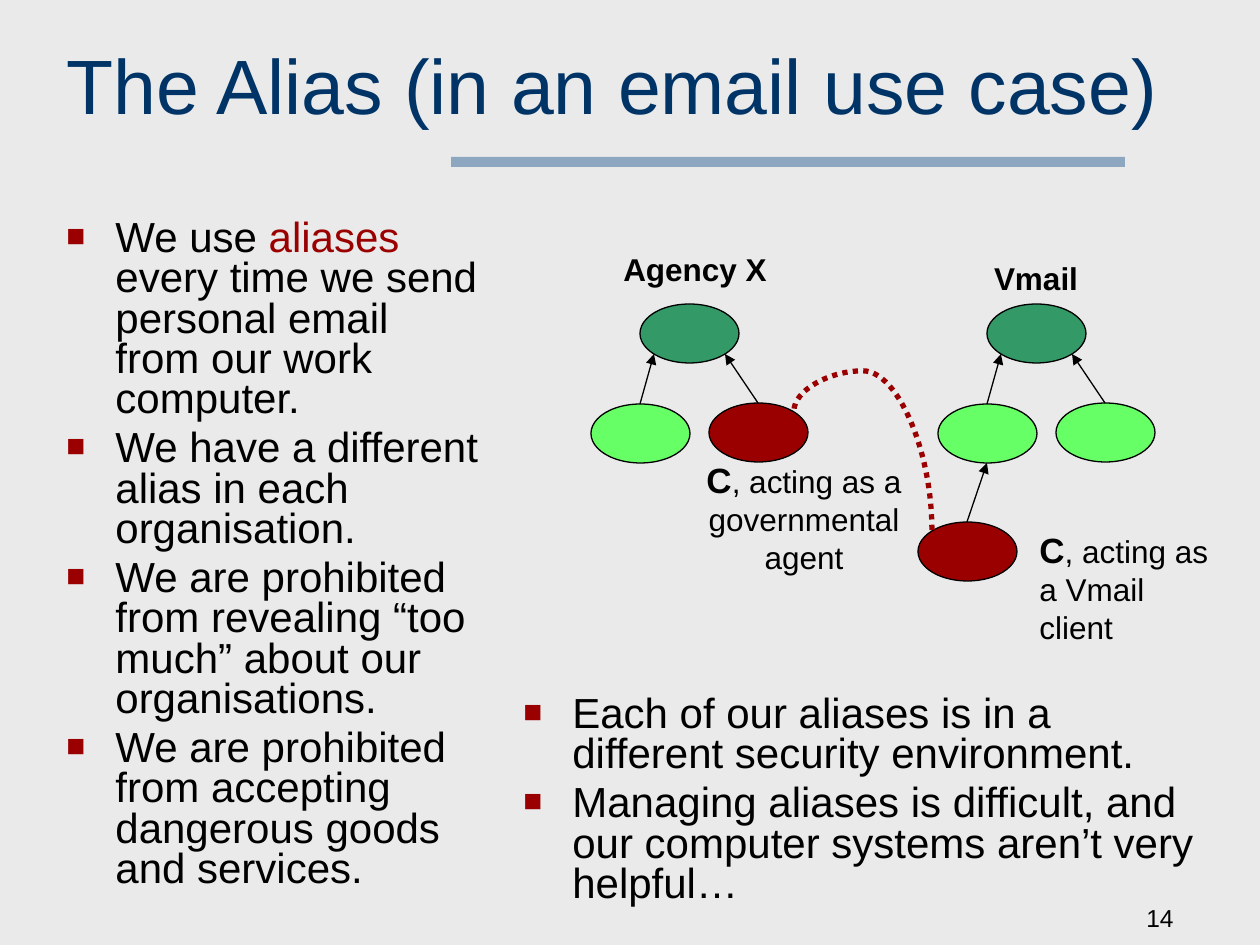
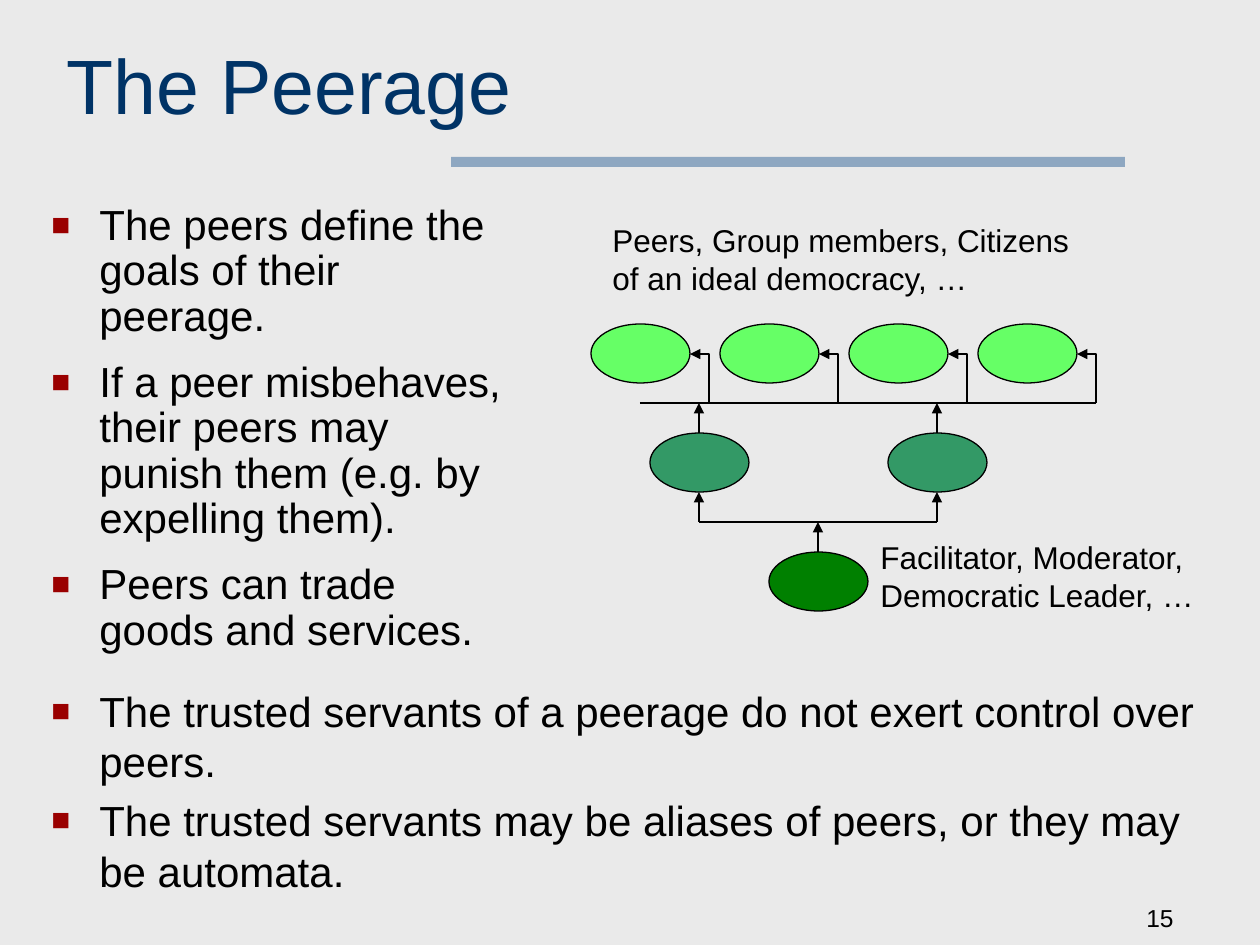
from lxml import etree
from pptx import Presentation
from pptx.dml.color import RGBColor
from pptx.enum.dml import MSO_LINE
from pptx.enum.shapes import MSO_CONNECTOR, MSO_SHAPE
from pptx.enum.text import MSO_ANCHOR, PP_ALIGN
from pptx.oxml.ns import qn
from pptx.util import Emu, Pt

EMU_PER_PX = 914400 / 126
SLIDE_W, SLIDE_H = 1260, 945
BLANK_LAYOUT = 6

FONT = "Arial"
PAPER, BLACK, NAVY, BAND = "EAEAEA", "000000", "003366", "336699"
DARK_RED, TEAL, LIGHT_GREEN, DEEP_GREEN = "9A0000", "339966", "66FF66", "008000"

CENTER, RIGHT = PP_ALIGN.CENTER, PP_ALIGN.RIGHT
TOP, BOTTOM = MSO_ANCHOR.TOP, MSO_ANCHOR.BOTTOM
STRAIGHT, ELBOW, CURVE = MSO_CONNECTOR.STRAIGHT, MSO_CONNECTOR.ELBOW, MSO_CONNECTOR.CURVE
OVAL, RECTANGLE = MSO_SHAPE.OVAL, MSO_SHAPE.RECTANGLE
DOTTED = MSO_LINE.ROUND_DOT

NODE_W, NODE_H = 99, 59
HALF_NODE = 49
MAIL_PROVIDER = "Vmail"


def px(length):
    return Emu(round(length * EMU_PER_PX))


def rgb(hex_colour):
    return RGBColor.from_string(hex_colour)


def add_child(parent, tag, **attributes):
    return etree.SubElement(parent, qn(tag), **attributes)


def set_all(target, values):
    for name, value in values.items():
        setattr(target, name, value)


def add_text(slide, box, paragraphs, size, colour=BLACK, anchor=TOP, bullet_indent=0, **spacing):
    """Each paragraph is a list of (text, overrides) runs."""
    frame = slide.shapes.add_textbox(*map(px, box)).text_frame
    set_all(frame, {"word_wrap": True, "vertical_anchor": anchor})
    for index, runs in enumerate(paragraphs):
        paragraph = frame.add_paragraph() if index else frame.paragraphs[0]
        set_all(paragraph, spacing)
        if bullet_indent:
            add_bullet(paragraph, bullet_indent)
        for text, overrides in runs:
            style = {"size": size, "colour": colour, "bold": False, **overrides}
            run = paragraph.add_run()
            run.text = text
            set_all(run.font, {"name": FONT, "size": Pt(style["size"]), "bold": style["bold"]})
            run.font.color.rgb = rgb(style["colour"])


def add_bullet(paragraph, indent):
    properties = paragraph._p.get_or_add_pPr()
    properties.set("marL", str(px(indent)))
    properties.set("indent", str(-px(indent)))
    add_child(add_child(properties, "a:buClr"), "a:srgbClr", val=DARK_RED)
    add_child(properties, "a:buSzPct", val="75000")
    add_child(properties, "a:buFont", typeface=FONT)
    add_child(properties, "a:buChar", char="■")


def add_bullets(slide, box, items, indent, gap=5, line_spacing=1.0):
    """Items are plain strings or lists of runs."""
    paragraphs = [[(item, {})] if isinstance(item, str) else item for item in items]
    add_text(slide, box, paragraphs, 24, bullet_indent=indent,
             space_before=Pt(gap), line_spacing=line_spacing)


def add_label(slide, box, text, bold=False, **spacing):
    add_text(slide, box, [[(text, {"bold": bold})]], 18, **spacing)


def add_alias_label(slide, box, role, **spacing):
    add_text(slide, box, [[("C", {"size": 20, "bold": True}), (role, {})]], 18, **spacing)


def add_filled(slide, kind, box, fill):
    shape = slide.shapes.add_shape(kind, *map(px, box))
    shape.shadow.inherit = False
    shape.fill.solid()
    shape.fill.fore_color.rgb = rgb(fill)
    return shape


def add_node(slide, x, y, fill):
    node = add_filled(slide, OVAL, (x, y, NODE_W, NODE_H), fill)
    node.line.color.rgb = rgb(BLACK)
    node.line.width = Pt(0.75)


def add_line(slide, start, end, kind=STRAIGHT, colour=BLACK, width=0.75, arrow=False, dash=None):
    line = slide.shapes.add_connector(kind, *map(px, (*start, *end)))
    line.line.color.rgb = rgb(colour)
    set_all(line.line, {"width": Pt(width), "dash_style": dash})
    if arrow:
        add_child(line.line._get_or_add_ln(), "a:tailEnd", type="triangle")
    add_child(line._element.spPr, "a:effectLst")
    return line


def add_arrow(slide, start, end):
    add_line(slide, start, end, arrow=True)


def add_upward_connector(slide, start, end, kind, preset, bend=None, **style):
    """Leave start vertically, for an end up and to the left: a quarter-turned connector."""
    middle_x, middle_y = (start[0] + end[0]) / 2, (start[1] + end[1]) / 2
    half_w, half_h = (start[1] - end[1]) / 2, (start[0] - end[0]) / 2
    line = add_line(slide, (middle_x + half_w, middle_y - half_h),
                    (middle_x - half_w, middle_y + half_h), kind, **style)
    properties = line._element.spPr
    properties.find(qn("a:xfrm")).set("rot", "5400000")
    geometry = properties.find(qn("a:prstGeom"))
    geometry.set("prst", preset)
    if bend:
        adjustments = geometry.find(qn("a:avLst"))
        if adjustments is None:
            adjustments = add_child(geometry, "a:avLst")
        add_child(adjustments, "a:gd", name="adj1", fmla=f"val {bend}")


def add_slide(deck, title, number):
    slide = deck.slides.add_slide(deck.slide_layouts[BLANK_LAYOUT])
    slide.background.fill.solid()
    slide.background.fill.fore_color.rgb = rgb(PAPER)
    band = add_filled(slide, RECTANGLE, (451, 157, 674, 10), BAND)
    band.line.fill.background()
    add_child(band._element.spPr.find(qn("a:solidFill"))[0], "a:alpha", val="50000")
    add_text(slide, (924, 900, 262, 39), [[(str(number), {})]], 14, anchor=BOTTOM, alignment=RIGHT)
    add_text(slide, (54, 31, 1136, 150), [[(title, {})]], 44, NAVY)
    return slide


def add_organisation(slide, x, right_fill):
    """A root with two members that point up to it."""
    add_node(slide, x + 49, 304, TEAL)
    add_node(slide, x, 404, LIGHT_GREEN)
    add_node(slide, x + 118, 403, right_fill)
    add_arrow(slide, (x + 49, 404), (x + 63, 354))
    add_arrow(slide, (x + 167, 403), (x + 134, 354))


def build_alias(deck):
    slide = add_slide(deck, "The Alias (in an email use case)", 14)
    add_bullets(slide, (54, 214, 437, 694), [
        [("We use ", {}), ("aliases ", {"colour": DARK_RED}),
         ("every time we send personal email from our work computer.", {})],
        "We have a different alias in each organisation.",
        "We are prohibited from revealing “too much” about our organisations.",
        "We are prohibited from accepting dangerous goods and services.",
    ], indent=49, line_spacing=0.8)

    add_label(slide, (591, 244, 208, 50), "Agency X", bold=True, alignment=CENTER)
    add_organisation(slide, 591, DARK_RED)
    add_label(slide, (937, 253, 198, 50), MAIL_PROVIDER, bold=True, alignment=CENTER)
    add_organisation(slide, 938, LIGHT_GREEN)
    add_node(slide, 918, 522, DARK_RED)
    add_arrow(slide, (967, 522), (987, 463))

    add_alias_label(slide, (680, 452, 248, 130), ", acting as a governmental agent",
                    alignment=CENTER)
    add_alias_label(slide, (1027, 522, 198, 131), f", acting as a {MAIL_PROVIDER} client")
    add_bullets(slide, (511, 690, 704, 227), [
        "Each of our aliases is in a different security environment.",
        "Managing aliases is difficult, and our computer systems aren’t very helpful…",
    ], indent=49, line_spacing=0.8)
    add_upward_connector(slide, (932, 530), (794, 411), CURVE, "curvedConnector3",
                         bend=133800, colour=DARK_RED, width=3, dash=DOTTED)


def build_peerage(deck):
    slide = add_slide(deck, "The Peerage", 15)
    add_bullets(slide, (39, 198, 483, 461), [
        "The peers define the goals of their peerage.",
        "If a peer misbehaves, their peers may punish them (e.g. by expelling them).",
        "Peers can trade goods and services.",
    ], indent=48, gap=12, line_spacing=0.9)
    add_bullets(slide, (39, 679, 1172, 227), [
        "The trusted servants of a peerage do not exert control over peers.",
        "The trusted servants may be aliases of peers, or they may be automata.",
    ], indent=48)

    add_label(slide, (600, 215, 486, 88), "Peers, Group members, Citizens of an ideal democracy, …")
    add_label(slide, (868, 532, 348, 88), "Facilitator, Moderator, Democratic Leader, …")

    peer_bus, servant_bus = 403, 522
    peers = [591 + 129 * i for i in range(4)]
    servants = [650, 888]
    facilitator = 769
    for x in peers:
        add_node(slide, x, 324, LIGHT_GREEN)
        add_upward_connector(slide, (x + 118, peer_bus), (x + NODE_W, 354), ELBOW,
                             "bentConnector2", arrow=True)
    add_line(slide, (peers[0] + HALF_NODE, peer_bus), (peers[-1] + 118, peer_bus))

    for x in servants:
        middle = x + HALF_NODE
        add_node(slide, x, 433, TEAL)
        add_arrow(slide, (middle, 433), (middle, peer_bus))
        add_arrow(slide, (middle, servant_bus), (middle, 492))
    add_line(slide, *[(x + HALF_NODE, servant_bus) for x in servants])

    add_node(slide, facilitator, 552, DEEP_GREEN)
    add_arrow(slide, (facilitator + HALF_NODE, 552), (facilitator + HALF_NODE, servant_bus))


def main():
    deck = Presentation()
    set_all(deck, {"slide_width": px(SLIDE_W), "slide_height": px(SLIDE_H)})
    build_alias(deck)
    build_peerage(deck)
    deck.save("out.pptx")


if __name__ == "__main__":
    main()
